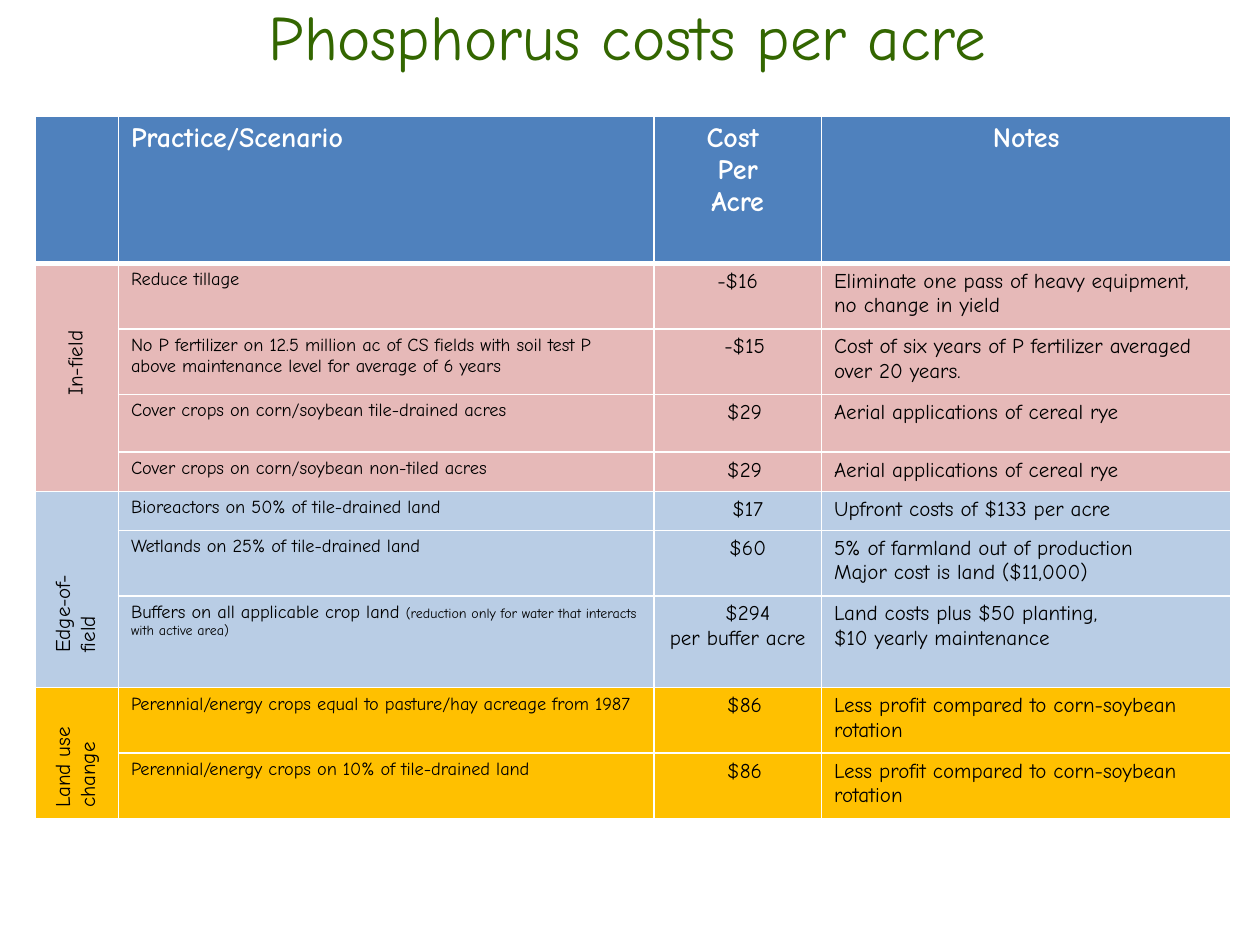
from lxml.etree import SubElement
from pptx import Presentation
from pptx.dml.color import RGBColor
from pptx.enum.text import MSO_ANCHOR as Anchor, MSO_AUTO_SIZE as AutoSize, PP_ALIGN as Align
from pptx.oxml.ns import qn
from pptx.util import Inches, Pt

FONT = "Comic Neue"
WHITE, BLACK, GREEN, HEADER_BLUE = "FFFFFF", "000000", "336600", "4F81BD"
COLUMNS = [0.66, 4.25, 1.33, 3.25]
HEADER_HEIGHT = 1.17
HEADINGS = [("Practice/Scenario", Align.LEFT), ("Cost \nPer\nAcre", Align.CENTER), ("Notes", Align.CENTER)]
PRACTICE = {"size": Pt(10.5), "bold": False}
DETAIL = {"size": Pt(12), "bold": False}
HEADING = {"size": Pt(16), "bold": True}
SMALL_PRINT = {"size": Pt(8), "bold": False}

# Each practice: row height, practice, small print, cost, cost indent, notes
GROUPS = [
    {"label": "In-field", "fill": "E6B9B8", "label_size": (0.82, 0.3), "label_drop": 0.74, "practices": [
        (0.52, "Reduce tillage", "", "-$16", 0,
         "Eliminate one pass of heavy equipment, no change in yield"),
        (0.52, "No P fertilizer on 12.5 million ac of CS fields with soil test P above maintenance level "
               "for average of 6 years", "", "-$15", 0.11,
         "Cost of six years of P fertilizer averaged over 20 years."),
        (0.46, "Cover crops on corn/soybean tile-drained acres", "", "$29", 0.11,
         "Aerial applications of cereal rye"),
        (0.31, "Cover crops on corn/soybean non-tiled acres", "", "$29", 0.11,
         "Aerial applications of cereal rye"),
    ]},
    {"label": "Edge-of-field", "fill": "B9CDE5", "label_size": (1.08, 0.5), "label_drop": 0.84, "practices": [
        (0.31, "Bioreactors on 50% of tile-drained land", "", "$17", 0.16,
         "Upfront costs of $133 per acre"),
        (0.52, "Wetlands on 25% of tile-drained land", "", "$60", 0.16,
         "5% of farmland out of production\nMajor cost is land ($11,000)"),
        (0.73, "Buffers on all applicable crop land ",
         "(reduction only for water that interacts with active area)", "$294\nper buffer acre", 0.16,
         "Land costs plus $50 planting,\n$10 yearly maintenance"),
    ]},
    {"label": "Land use change", "fill": "FFC000", "label_size": (0.98, 0.5), "label_drop": 0.56, "practices": [
        (0.52, "Perennial/energy crops equal to pasture/hay acreage from 1987", "", "$86", 0.11,
         "Less profit compared to corn-soybean rotation"),
        (0.52, "Perennial/energy crops on 10% of tile-drained land", "", "$86", 0.11,
         "Less profit compared to corn-soybean rotation"),
    ]},
]


def rgb(hex_colour):
    """Return the colour for a hex string."""
    return RGBColor.from_string(hex_colour)


def add_run(paragraph, wording, formats, colour=BLACK):
    """Add one formatted run to a paragraph."""
    run = paragraph.add_run()
    run.text = wording
    for name, value in {"name": FONT, **formats}.items():
        setattr(run.font, name, value)
    run.font.color.rgb = rgb(colour)


def write_lines(frame, wording, formats, colour=BLACK, align=Align.LEFT):
    """Write each line of the wording as its own paragraph."""
    for number, line in enumerate(wording.split("\n")):
        paragraph = frame.add_paragraph() if number else frame.paragraphs[0]
        paragraph.alignment = align
        add_run(paragraph, line, formats, colour)


def style_cell(cell, fill, bottom_width=1):
    """Give a cell white borders and a solid fill."""
    properties = cell._tc.get_or_add_tcPr()
    for side, width in {"L": 1, "R": 1, "T": 1, "B": bottom_width}.items():
        line = SubElement(properties, qn(f"a:ln{side}"), w=str(Pt(width)))
        SubElement(SubElement(line, qn("a:solidFill")), qn("a:srgbClr"), val=WHITE)
    cell.fill.solid()
    cell.fill.fore_color.rgb = rgb(fill)


def add_title(slide, left, top, width, height):
    """Place the slide title in its placeholder."""
    title = slide.shapes.title
    box = {"left": left, "top": top, "width": width, "height": height}
    for name, value in box.items():
        setattr(title, name, Inches(value))
    title.text_frame.auto_size = AutoSize.NONE
    title.text_frame.vertical_anchor = Anchor.MIDDLE
    write_lines(title.text_frame, "Phosphorus costs per acre", {"size": Pt(36)}, GREEN, Align.CENTER)


def add_cost_table(slide, left, top, width, height):
    """Add the table of practices, costs and notes."""
    practices = [(group["fill"], *practice) for group in GROUPS for practice in group["practices"]]
    table = slide.shapes.add_table(len(practices) + 1, len(COLUMNS), Inches(left), Inches(top),
                                   Inches(width), Inches(height)).table
    for column, column_width in zip(table.columns, COLUMNS):
        column.width = Inches(column_width)
    for row, row_height in zip(table.rows, [HEADER_HEIGHT] + [practice[1] for practice in practices]):
        row.height = Inches(row_height)
        empty_line = row.cells[0].text_frame.paragraphs[0]
        SubElement(empty_line._p, qn("a:endParaRPr"), sz="1200")

    for cell in table.rows[0].cells:
        style_cell(cell, HEADER_BLUE, bottom_width=3)
    for column, (heading, align) in enumerate(HEADINGS, start=1):
        write_lines(table.cell(0, column).text_frame, heading, HEADING, WHITE, align)

    for number, (fill, _, practice, small_print, cost, indent, notes) in enumerate(practices, start=1):
        for cell in table.rows[number].cells:
            style_cell(cell, fill)
        practice_text, cost_text, notes_text = (table.cell(number, column).text_frame for column in (1, 2, 3))
        write_lines(practice_text, practice, PRACTICE)
        if small_print:
            add_run(practice_text.paragraphs[0], small_print, SMALL_PRINT)
        write_lines(cost_text, cost, DETAIL, align=Align.CENTER)
        cost_text.paragraphs[0]._p.get_or_add_pPr().set("marL", str(Inches(indent)))
        write_lines(notes_text, notes, DETAIL)

    first = 1
    for group in GROUPS:
        last = first + len(group["practices"]) - 1
        table.cell(first, 0).merge(table.cell(last, 0))
        first = last + 1


def add_group_labels(slide, left, top, width):
    """Add a label turned upright over each group's merged cell."""
    centre = left + width / 2 - 0.02
    group_top = top + HEADER_HEIGHT
    for group in GROUPS:
        length, thickness = group["label_size"]
        middle = group_top + group["label_drop"]
        label = slide.shapes.add_textbox(Inches(centre - length / 2), Inches(middle - thickness / 2),
                                         Inches(length), Inches(thickness))
        label.rotation = 270
        label.text_frame.word_wrap = True
        label.text_frame.auto_size = AutoSize.SHAPE_TO_FIT_TEXT
        write_lines(label.text_frame, group["label"], DETAIL)
        group_top += sum(practice[0] for practice in group["practices"])


def main():
    """Build the slide and save it."""
    deck = Presentation()
    deck.slide_width, deck.slide_height = Inches(10), Inches(7.5)
    slide = deck.slides.add_slide(deck.slide_layouts[5])
    add_title(slide, 0.02, -0.02, 9.92, 0.6)
    add_cost_table(slide, 0.28, 0.92, 9.5, 5.58)
    add_group_labels(slide, 0.28, 0.92, COLUMNS[0])
    deck.save("out.pptx")


if __name__ == "__main__":
    main()
